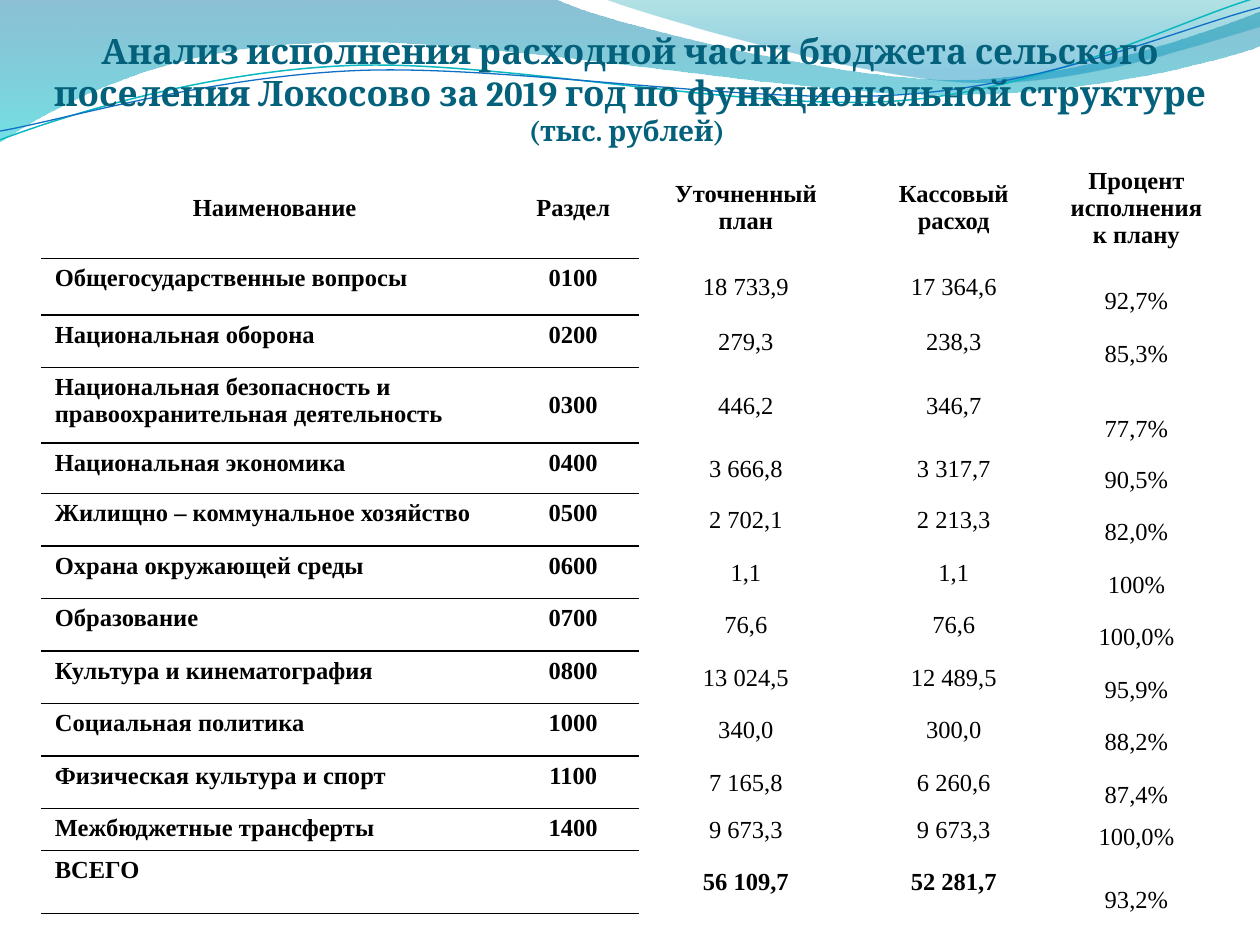
from math import cos, radians, sin

from lxml.etree import SubElement
from pptx import Presentation
from pptx.dml.color import RGBColor
from pptx.enum.text import MSO_ANCHOR as ANCHOR, PP_ALIGN as ALIGN
from pptx.oxml.ns import qn
from pptx.util import Inches, Pt

WHITE = RGBColor(0xFF, 0xFF, 0xFF)
BLACK = RGBColor(0, 0, 0)
NAVY = RGBColor(0x04, 0x61, 0x7B)
DEEP_BLUE = RGBColor(0x00, 0x74, 0xA1)
AQUA = RGBColor(0x00, 0xC6, 0xCF)
SEA = RGBColor(0x00, 0xA1, 0xA9)
SKY = RGBColor(0x00, 0x8B, 0xBF)
TEAL_LINE = RGBColor(0x0A, 0xB8, 0xBF)
BLUE_LINE = RGBColor(0x0F, 0x6F, 0xC6)

# Each outline is a list of steps: 2 numbers make a line, 6 make a Bezier curve.
WIDE_WAVE = [(0, 0), (4.4, -0.01), (4.76, 0.17, 6.64, 0.63, 7.58, 0.63),
             (8.53, 0.63, 9.58, 0.26, 10, 0.09), (10.01, 0.36),
             (9.83, 0.44, 8.7, 0.76, 7.46, 0.75), (6.22, 0.75, 3.82, 0.28, 2.57, 0.34),
             (1.29, 0.36, 0.46, 0.83, -0.01, 1.13), (0, 0)]
RIGHT_WAVE = [(4.79, -0.01), (5.09, 0.11, 6.82, 0.62, 7.69, 0.65),
              (8.56, 0.69, 9.61, 0.32, 10, 0.21), (10, 0), (4.79, -0.01)]
TEAL_CURVE = [(0, 1.11), (0.48, 0.93, 1.58, 0.57, 2.77, 0.52),
              (3.95, 0.47, 5.93, 0.89, 7.13, 0.8), (8.33, 0.71, 9.38, 0.15, 9.98, -0.02)]
BLUE_CURVE = [(0, 1.04), (0.47, 0.96, 1.64, 0.61, 2.83, 0.56),
              (4.03, 0.51, 5.97, 0.84, 7.17, 0.75), (8.36, 0.67, 9.41, 0.21, 10, 0.06)]
CURVE_TILT = -2.7

COL_WIDTHS = [3.69, 1.05, 1.69, 1.61, 1.29]
PLAIN_ROW = 2.5 / 6
TALL_ROW = 3
ROW_HEIGHTS = [0.75, 0.45, PLAIN_ROW, 0.6, 0.4] + [PLAIN_ROW] * 6 + [0.33, 0.5]
BUDGET = [
    ("Наименование", "Раздел", "Уточненный план", "Кассовый расход",
     "Процент исполнения к плану"),
    ("Общегосударственные вопросы", "0100", "18 733,9", "17 364,6", "92,7%"),
    ("Национальная оборона", "0200", "279,3", "238,3", "85,3%"),
    ("Национальная безопасность и правоохранительная деятельность", "0300",
     "446,2", "346,7", "77,7%"),
    ("Национальная экономика", "0400", "3 666,8", "3 317,7", "90,5%"),
    ("Жилищно – коммунальное хозяйство", "0500", "2 702,1", "2 213,3", "82,0%"),
    ("Охрана окружающей среды", "0600", "1,1", "1,1", "100%"),
    ("Образование", "0700", "76,6", "76,6", "100,0%"),
    ("Культура и кинематография", "0800", "13 024,5", "12 489,5", "95,9%"),
    ("Социальная политика", "1000", "340,0", "300,0", "88,2%"),
    ("Физическая культура и спорт", "1100", "7 165,8", "6 260,6", "87,4%"),
    ("Межбюджетные трансферты", "1400", "9 673,3", "9 673,3", "100,0%"),
    ("ВСЕГО", "", "56 109,7", "52 281,7", "93,2%"),
]


def turn(x, y, degrees, cx=4.99, cy=0.58):
    """Turn a point clockwise about the middle of the curves."""
    a = radians(degrees)
    dx, dy = x - cx, y - cy
    return cx + dx * cos(a) - dy * sin(a), cy + dx * sin(a) + dy * cos(a)


class BudgetSlide:
    title_font = "Cambria"
    table_font = "Times New Roman"

    def __init__(self, prs):
        self.s = prs.slides.add_slide(prs.slide_layouts[6])

    def outline(self, outline, close, tilt=0):
        """Draw the steps as straight lines, then join each three of a curve into one."""
        points = [turn(*step[i:i + 2], -tilt)
                  for step in outline for i in range(0, len(step), 2)]
        points = [(Inches(x), Inches(y)) for x, y in points]
        builder = self.s.shapes.build_freeform(*points[0])
        builder.add_line_segments(points[1:], close=close)
        sp = builder.convert_to_shape()
        sp.shadow.inherit = False
        sp.rotation = tilt
        lines = iter(list(sp._element.iter(qn("a:lnTo"))))
        for step in outline[1:]:
            first = next(lines)
            if len(step) == 6:
                bezier = SubElement(first.getparent(), qn("a:cubicBezTo"))
                first.addprevious(bezier)
                for line in (first, next(lines), next(lines)):
                    bezier.append(line[0])
                    line.getparent().remove(line)
        return sp

    def wave(self, outline, *stops):
        """Fill an outline downwards; a stop is position, colour, opacity in percent."""
        sp = self.outline(outline, True)
        sp.line.fill.background()
        sp.fill.gradient()
        sp.fill.gradient_angle = 270
        for stop, (position, color, _) in zip(sp.fill.gradient_stops, stops):
            stop.position = position
            stop.color.rgb = color
        for clr, (_, _, opacity) in zip(sp._element.spPr.iter(qn("a:srgbClr")), stops):
            SubElement(clr, qn("a:alpha"), val=str(opacity * 1000))

    def curve(self, outline, color, width):
        sp = self.outline(outline, False, CURVE_TILT)
        sp.fill.background()
        sp.line.color.rgb = color
        sp.line.width = Pt(width)

    def font(self, r, name, size, color, bold=True):
        r.font.name, r.font.size, r.font.bold = name, Pt(size), bold
        r.font.color.rgb = color

    def title(self, text, unit):
        box = self.s.shapes.add_textbox(Inches(0.39), 0, Inches(9.22), Inches(1.17))
        tf = box.text_frame
        tf.word_wrap = True
        tf.vertical_anchor = ANCHOR.BOTTOM
        tf.margin_left = tf.margin_right = tf.margin_bottom = 0
        tf.margin_top = Inches(0.05)
        p = tf.paragraphs[0]
        p.text = text
        p.alignment = ALIGN.CENTER
        p.add_run().text = unit
        for r, size in zip(p.runs, (20, 16)):
            self.font(r, self.title_font, size, NAVY)

    def borders(self, cell, top, bottom):
        tcPr = cell._tc.get_or_add_tcPr()
        for side, color in zip("LRTB", (WHITE, WHITE, top, bottom)):
            ln = SubElement(tcPr, qn(f"a:ln{side}"), w=str(Pt(1)))
            SubElement(SubElement(ln, qn("a:solidFill")), qn("a:srgbClr"), val=str(color))

    def cell(self, cell, text, row, col):
        header, label = row == 0, col < 2
        total = row == len(BUDGET) - 1
        self.borders(cell, BLACK if label and not header else WHITE,
                     BLACK if label else WHITE)
        cell.fill.solid()
        cell.fill.fore_color.rgb = WHITE
        if header or label:
            cell.margin_left = cell.margin_right = Inches(0.1)
            cell.margin_top = cell.margin_bottom = Inches(0.05)
        else:
            cell.margin_left = cell.margin_right = cell.margin_top = Inches(0.01)
            cell.margin_bottom = 0
        if header or col in (2, 3) or (row, col) == (TALL_ROW, 1):
            cell.vertical_anchor = ANCHOR.MIDDLE
        else:
            cell.vertical_anchor = ANCHOR.TOP if label else ANCHOR.BOTTOM
        p = cell.text_frame.paragraphs[0]
        p.text = text
        p.alignment = ALIGN.CENTER if header or col else ALIGN.LEFT
        if header or label:
            spacing = SubElement(p._p.get_or_add_pPr(), qn("a:spcBef"))
            SubElement(spacing, qn("a:spcPct"), val="20000")
        for r in p.runs:
            self.font(r, self.table_font, 14, BLACK, header or label or (total and col < 4))

    def table(self, rows):
        width = sum(COL_WIDTHS)
        table = self.s.shapes.add_table(
            len(rows), len(COL_WIDTHS), Inches((10 - width) / 2), Inches(1.25),
            Inches(width), Inches(sum(ROW_HEIGHTS))).table
        table.horz_banding = table.first_row = False
        for column, col_width in zip(table.columns, COL_WIDTHS):
            column.width = Inches(col_width)
        for table_row, height in zip(table.rows, ROW_HEIGHTS):
            table_row.height = Inches(height)
        for i, values in enumerate(rows):
            for j, text in enumerate(values):
                self.cell(table.cell(i, j), text, i, j)
        last = len(rows) - 1
        table.cell(last, 0).merge(table.cell(last, 1))


def main():
    prs = Presentation()
    prs.slide_width, prs.slide_height = Inches(10), Inches(7.5)
    slide = BudgetSlide(prs)
    slide.wave(WIDE_WAVE, (0, DEEP_BLUE, 45), (1, AQUA, 55))
    slide.wave(RIGHT_WAVE, (0, SEA, 30), (0.8, SKY, 45))
    slide.curve(TEAL_CURVE, TEAL_LINE, 0.85)
    slide.curve(BLUE_CURVE, BLUE_LINE, 0.75)
    slide.title("Анализ исполнения расходной части бюджета сельского поселения "
                "Локосово за 2019 год по функциональной структуре ", "(тыс. рублей) ")
    slide.table(BUDGET)
    prs.save("out.pptx")


if __name__ == "__main__":
    main()
